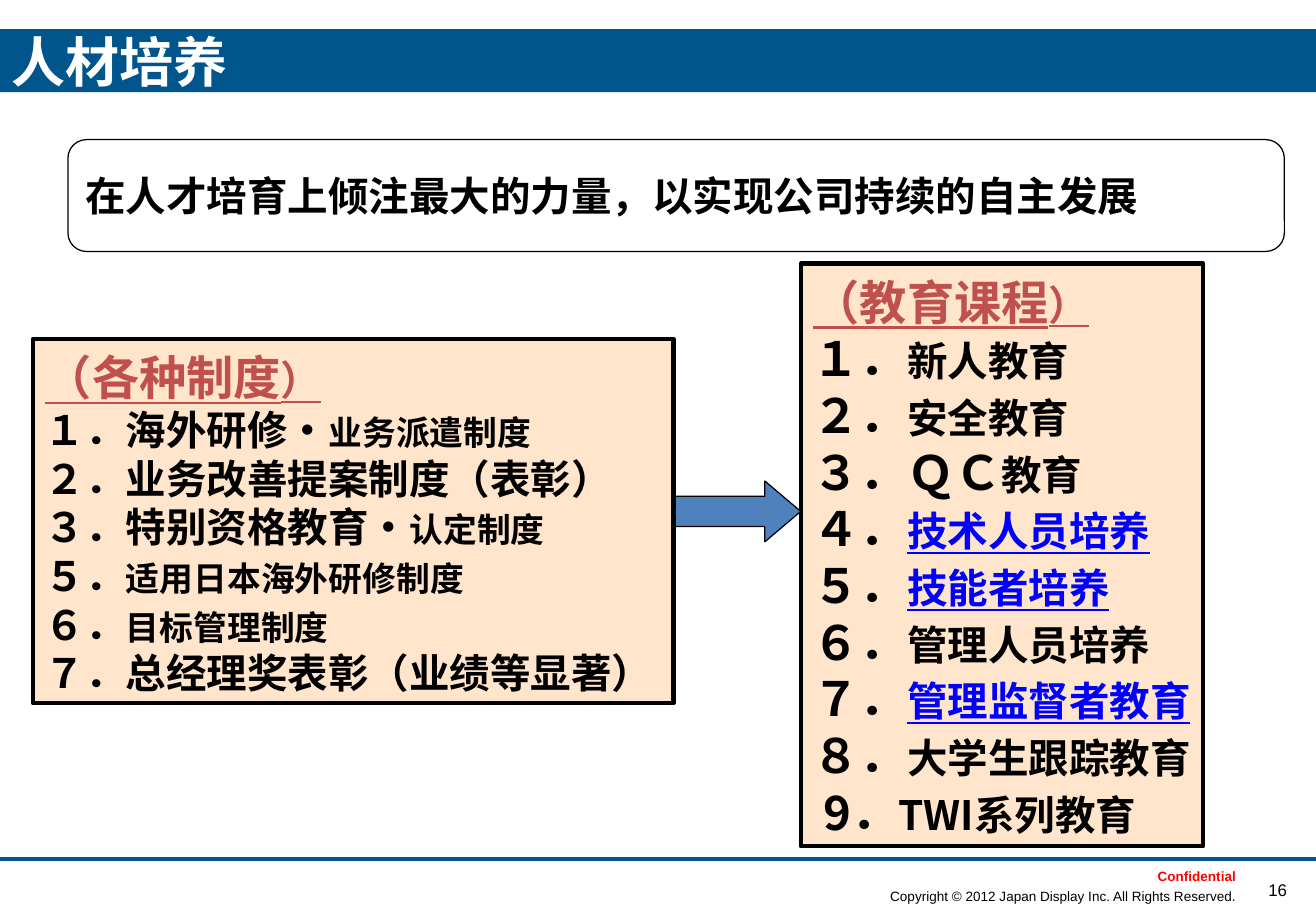
import pptx
import pptx.util
import pptx.dml.color
import pptx.enum.shapes
import pptx.enum.text
import pptx.oxml
import pptx.oxml.ns

Cm, Pt = pptx.util.Cm, pptx.util.Pt
MSO = pptx.enum.shapes.MSO_SHAPE
ANCHOR = pptx.enum.text.MSO_ANCHOR
ALIGN = pptx.enum.text.PP_ALIGN
CJK = "Noto Sans CJK SC"
COLORS = {"band": "00558C", "white": "FFFFFF", "black": "000000", "red": "FF0000",
          "heading": "C0504D", "panel": "FFCC99", "arrow": "4F81BD", "key": "0000FF"}
WIDTH, HEIGHT = 27.51, 19.05

SYSTEMS = [("１．海外研修・", "业务派遣制度"), ("２．业务改善提案制度（表彰）", ""),
           ("３．特别资格教育・", "认定制度"), ("５．", "适用日本海外研修制度"),
           ("６．", "目标管理制度"), ("７．总经理奖表彰（业绩等显著）", "")]
COURSES = [("１．", "新人教育"), ("２．", "安全教育"), ("３．ＱＣ", "教育"),
           ("４．", "技术人员培养"), ("５．", "技能者培养"), ("６．", "管理人员培养"),
           ("７．", "管理监督者教育"), ("８．", "大学生跟踪教育"), (" 9．", "TWI系列教育")]
KEY_COURSES = {"技术人员培养", "技能者培养", "管理监督者教育"}


def rgb(name):
    """Return the named colour."""
    return pptx.dml.color.RGBColor.from_string(COLORS[name])


def add_run(p, text, size=24, color="black", bold=True, underline=False, font=CJK):
    """Append a formatted run to a paragraph."""
    r = p.add_run()
    r.text = text
    f = r.font
    f.name, f.size, f.bold, f.underline = font, Pt(size), bold, underline
    f.color.rgb = rgb(color)
    ea = pptx.oxml.parse_xml(
        f'<a:ea {pptx.oxml.ns.nsdecls("a")} typeface="{font}"/>')
    r.font._element.find(pptx.oxml.ns.qn("a:latin")).addnext(ea)
    return r


class Deck:
    """Hold the presentation style and the current slide."""

    def __init__(self):
        """Start a presentation with one title-only slide."""
        self.prs = pptx.Presentation()
        self.prs.slide_width, self.prs.slide_height = Cm(WIDTH), Cm(HEIGHT)
        self.s = self.prs.slides.add_slide(self.prs.slide_layouts[5])

    def frame(self, sp, anchor=ANCHOR.TOP, top=0.13, right=0.25):
        """Set the text frame of a shape and return it."""
        tf = sp.text_frame
        tf.word_wrap = True
        tf.auto_size = pptx.enum.text.MSO_AUTO_SIZE.NONE
        tf.vertical_anchor = anchor
        tf.margin_left, tf.margin_right = Cm(0.25), Cm(right)
        tf.margin_top, tf.margin_bottom = Cm(top), Cm(0.13)
        tf.paragraphs[0].alignment = ALIGN.LEFT
        return tf

    def title(self, text, box):
        """Place the title in front of what is drawn so far."""
        sp = self.s.shapes.title
        sp.left, sp.top, sp.width, sp.height = map(Cm, box)
        add_run(self.frame(sp, ANCHOR.MIDDLE).paragraphs[0], text, size=32, color="white")
        sp.element.getparent().append(sp.element)

    def shape(self, kind, box, fill=None, line=None, alpha=None):
        """Add a preset shape."""
        sp = self.s.shapes.add_shape(kind, *map(Cm, box))
        sp.shadow.inherit = False
        if fill:
            sp.fill.solid()
            sp.fill.fore_color.rgb = rgb(fill)
        else:
            sp.fill.background()
        if alpha:
            color = sp.element.spPr.find(".//" + pptx.oxml.ns.qn("a:srgbClr"))
            color.append(pptx.oxml.parse_xml(
                f'<a:alpha {pptx.oxml.ns.nsdecls("a")} val="{alpha * 1000}"/>'))
        if line:
            sp.line.width = Pt(line)
            sp.line.color.rgb = rgb("black")
        else:
            sp.line.fill.background()
        return sp

    def label(self, text, box, align=ALIGN.LEFT, **fmt):
        """Add a one-line text box."""
        p = self.frame(self.s.shapes.add_textbox(*map(Cm, box))).paragraphs[0]
        p.alignment = align
        add_run(p, text, font="Arial", **fmt)

    def rule(self, y):
        """Add a full-width horizontal line."""
        c = self.s.shapes.add_connector(
            pptx.enum.shapes.MSO_CONNECTOR.STRAIGHT, 0, Cm(y), Cm(WIDTH), Cm(y))
        c.line.width = Pt(2)
        c.line.color.rgb = rgb("band")
        c.element.spPr.append(pptx.oxml.parse_xml(
            f'<a:effectLst {pptx.oxml.ns.nsdecls("a")}/>'))

    def panel(self, heading, rows, box, sizes, pitch):
        """Add a bordered list panel with an underlined heading."""
        sp = self.shape(MSO.RECTANGLE, box, fill="panel", line=2.5, alpha=50)
        tf = self.frame(sp, top=0.2, right=0)
        p = tf.paragraphs[0]
        p.line_spacing = Pt(33.6)
        add_run(p, heading, size=28, color="heading", underline=True)
        add_run(p, "）", color="heading", underline=True)
        for lead, rest in rows:
            p = tf.add_paragraph()
            p.alignment = ALIGN.LEFT
            p.line_spacing = Pt(pitch)
            add_run(p, lead, size=sizes[0])
            if rest:
                key = rest in KEY_COURSES
                add_run(p, rest, size=sizes[1], color="key" if key else "black",
                        underline=key)


def main():
    """Build the slide and save it."""
    d = Deck()
    d.shape(MSO.RECTANGLE, (0, 0.61, WIDTH, 1.32), fill="band")
    d.label("16", (26.01, 18.26, 1.4, 0.86), align=ALIGN.CENTER, size=10, bold=False)
    d.label("Copyright © 2012 Japan Display Inc. All Rights Reserved.",
            (18.36, 18.44, 7.87, 0.6), size=8, bold=False)
    d.rule(17.96)
    d.label("Confidential", (23.95, 18.03, 2.26, 0.61), size=8, color="red")
    d.title("人材培养", (0, 0.43, 7.04, 1.7))

    message = d.shape(MSO.ROUNDED_RECTANGLE, (1.42, 2.92, 25.43, 2.34), line=0.75)
    add_run(d.frame(message, ANCHOR.MIDDLE).paragraphs[0],
            "在人才培育上倾注最大的力量，以实现公司持续的自主发展")

    d.panel("（教育课程", COURSES, (16.74, 5.51, 8.41, 12.19), (28, 24), 33.6)
    arrow = d.shape(MSO.RIGHT_ARROW, (14.1, 10.06, 2.64, 1.27), fill="arrow", line=0.75)
    arrow.adjustments[1] = 0.59
    d.panel("（各种制度", SYSTEMS, (0.69, 7.09, 13.39, 7.62), (24, 20), 28.8)
    d.prs.save("out.pptx")


if __name__ == "__main__":
    main()
